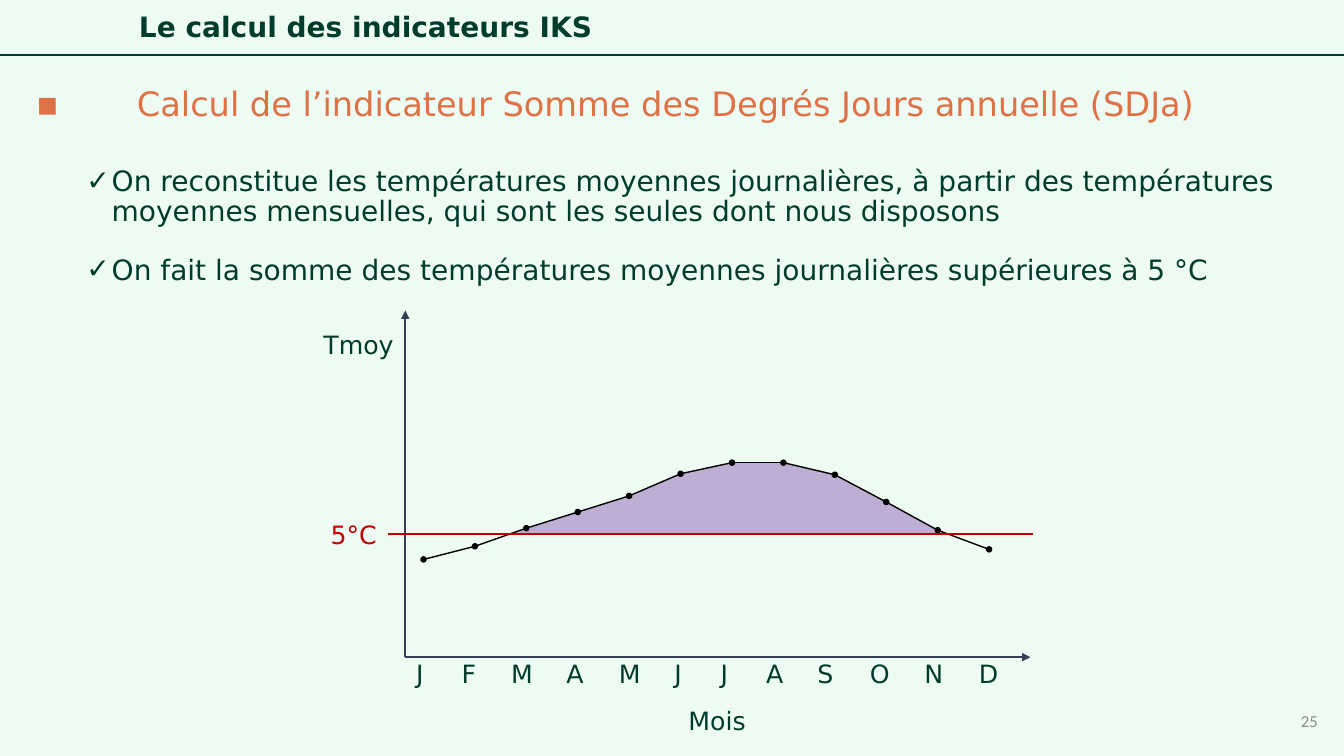
import lxml.etree
import pptx
import pptx.dml.color
import pptx.enum.dml
import pptx.enum.shapes
import pptx.enum.text
import pptx.oxml.ns
import pptx.util

Inches, Pt = pptx.util.Inches, pptx.util.Pt
qn = pptx.oxml.ns.qn
MIDDLE = pptx.enum.text.MSO_ANCHOR.MIDDLE
RIGHT = pptx.enum.text.PP_ALIGN.RIGHT

GREEN, ORANGE, RED, GREY = "003C2B", "DE7246", "C00000", "8C8C8C"
SLATE, BLACK, LILAC, MINT = "324055", "000000", "BEAED4", "EEFBF2"
rgb = pptx.dml.color.RGBColor.from_string

deck = pptx.Presentation()
deck.slide_width, deck.slide_height = Inches(13.33), Inches(7.5)
page = deck.slides.add_slide(deck.slide_layouts[6])
page.background.fill.solid()
page.background.fill.fore_color.rgb = rgb(MINT)


def add_text(words, left, top, width, height=0.4, color=GREEN, frame=None, **font):
    box = page.shapes.add_textbox(Inches(left), Inches(top), Inches(width), Inches(height))
    for name, value in {"word_wrap": True, **(frame or {})}.items():
        setattr(box.text_frame, name, value)
    para = box.text_frame.paragraphs[0]
    span = para.add_run()
    span.text = words
    for name, value in {"name": "DejaVu Sans", "size": Pt(18), **font}.items():
        setattr(span.font, name, value)
    span.font.color.rgb = rgb(color)
    return para


def add_line(start, end, color, weight, arrow=False):
    line = page.shapes.add_connector(
        pptx.enum.shapes.MSO_CONNECTOR.STRAIGHT, *map(Inches, (*start, *end)))
    line.line.color.rgb = rgb(color)
    line.line.width = Pt(weight)
    if arrow:
        lxml.etree.SubElement(line.line._get_or_add_ln(), qn("a:tailEnd"), type="triangle")
    lxml.etree.SubElement(line._element.spPr, qn("a:effectLst"))


# Header
add_line((0, 0.55), (13.33, 0.55), GREEN, 1.5)
title = add_text("Le calcul des indicateurs IKS", 1.28, 0.08, 11.5,
                 frame={"vertical_anchor": MIDDLE}, size=Pt(20), bold=True)
title.line_spacing = 0.9

# Bulleted text: words, bullet, left margin, hanging indent, space before, size, colour
items = [
    ("Calcul de l’indicateur Somme des Degrés Jours annuelle (SDJa)",
     "▪", 1, 1, 0, 24, ORANGE),
    ("On reconstitue les températures moyennes journalières, à partir des températures "
     "moyennes mensuelles, qui sont les seules dont nous disposons",
     "✓", 0.75, 0.25, 31, 20, GREEN),
    ("On fait la somme des températures moyennes journalières supérieures à 5 °C",
     "✓", 0.75, 0.25, 20, 20, GREEN),
]
body = page.shapes.add_textbox(Inches(0.26), Inches(0.82), Inches(13.07), Inches(2.75)).text_frame
body.word_wrap = True
for number, (words, bullet, margin, hanging, before, size, color) in enumerate(items):
    para = body.add_paragraph() if number else body.paragraphs[0]
    props = para._p.get_or_add_pPr()
    props.set("marL", str(Inches(margin)))
    props.set("indent", str(-Inches(hanging)))
    lxml.etree.SubElement(props, qn("a:buFont"), typeface="DejaVu Sans")
    lxml.etree.SubElement(props, qn("a:buChar"), char=bullet)
    para.line_spacing = 0.9
    para.space_before = Pt(before)
    span = para.add_run()
    span.text = words
    for name, value in {"name": "DejaVu Sans", "size": Pt(size)}.items():
        setattr(span.font, name, value)
    span.font.color.rgb = rgb(color)

# Monthly mean temperatures, evenly spaced along the axis
heights = [5.55, 5.42, 5.24, 5.08, 4.92, 4.7, 4.59, 4.59, 4.71, 4.98, 5.26, 5.45]
points = [(4.2 + 0.51 * month, height) for month, height in enumerate(heights)]
threshold = 5.3

# Area above the threshold, March to November
outline = [(5.05, threshold), *points[2:11], (9.41, threshold)]
corners = [(Inches(x), Inches(y)) for x, y in outline]
builder = page.shapes.build_freeform(*corners[0], scale=1.0)
builder.add_line_segments(corners[1:], close=True)
area = builder.convert_to_shape()
area.shadow.inherit = False
area.fill.solid()
area.fill.fore_color.rgb = rgb(LILAC)
area.line.fill.background()

# Axes and curve
origin = (4.02, 6.52)
add_line(origin, (4.02, 3.08), SLATE, 1.5, arrow=True)
add_line(origin, (10.22, 6.52), SLATE, 1.5, arrow=True)
for start, end in zip(points, points[1:]):
    add_line(start, end, BLACK, 1)
for x, y in points:
    dot = page.shapes.add_shape(pptx.enum.shapes.MSO_SHAPE.OVAL, Inches(x - 0.025),
                                Inches(y - 0.025), Inches(0.05), Inches(0.05))
    dot.shadow.inherit = False
    dot.fill.solid()
    dot.fill.fore_color.rgb = rgb(BLACK)
    dot.line.color.rgb = rgb(BLACK)
    dot.line.width = Pt(1)
add_line((3.85, threshold), (10.25, threshold), RED, 1.5)

# Labels
month_lefts = [4.03, 4.48, 4.97, 5.52, 6.04, 6.59, 7.05, 7.5, 8.01, 8.53, 9.07, 9.61]
letter_widths = {"J": 0.32, "F": 0.35, "M": 0.41, "A": 0.37, "S": 0.37,
                 "O": 0.4, "N": 0.4, "D": 0.4}
for letter, left in zip("JFMAMJJASOND", month_lefts):
    add_text(letter, left, 6.48, letter_widths[letter], frame={"word_wrap": False})
add_text("Mois", 6.73, 6.95, 0.77)
add_text("Tmoy", 3.11, 3.22, 1.23)
add_text("5°C", 3.18, 5.1, 0.75, color=RED)
page_number = add_text("25", 10.17, 6.95, 3, color=GREY, frame={"vertical_anchor": MIDDLE},
                       name="Calibri", size=Pt(12))
page_number.alignment = RIGHT

deck.save("out.pptx")
